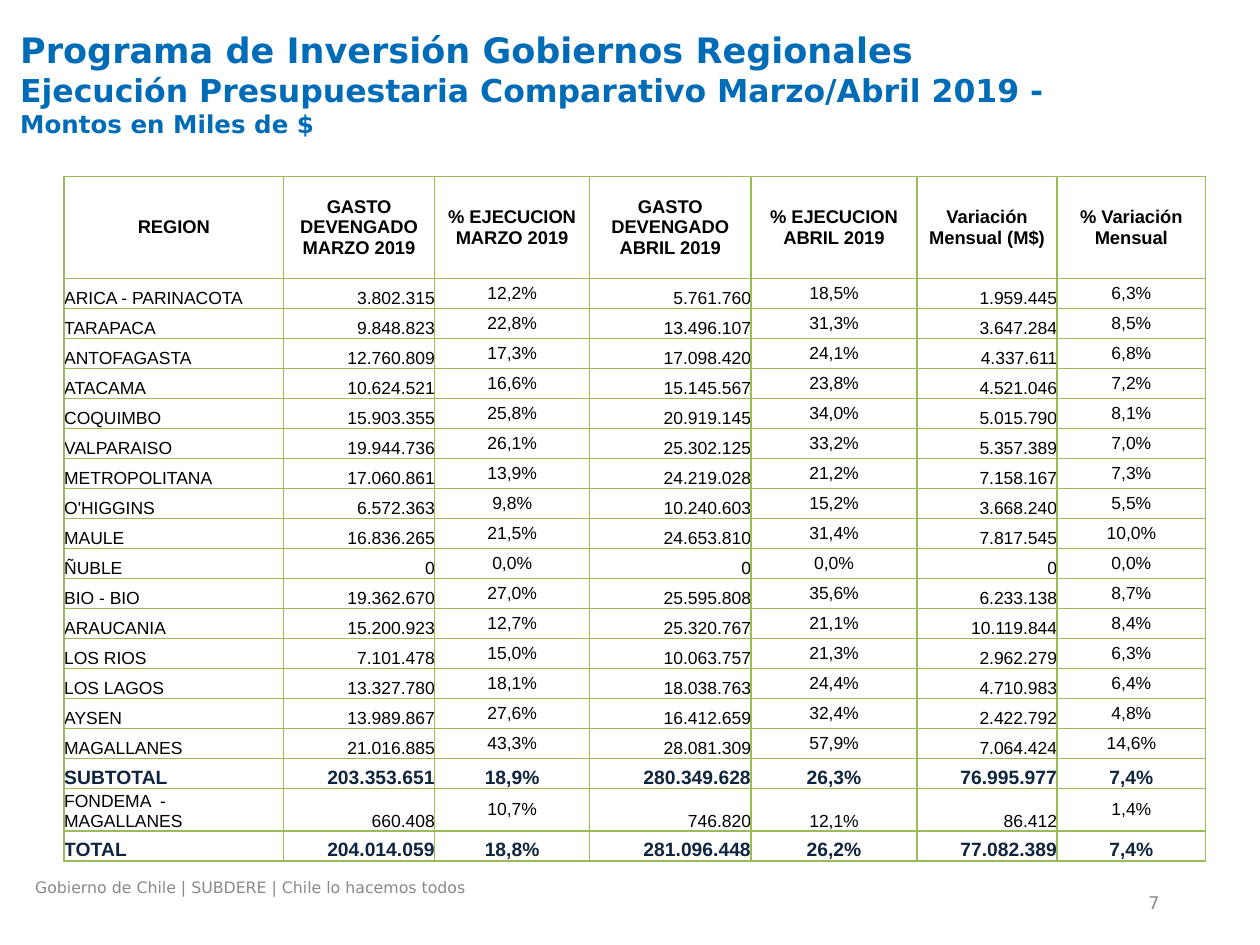
from dataclasses import dataclass
from typing import Any

from lxml.etree import SubElement
from pptx import Presentation
from pptx.dml.color import RGBColor
from pptx.enum.text import MSO_ANCHOR as Anchor, MSO_AUTO_SIZE as AutoSize, PP_ALIGN as Align
from pptx.oxml.ns import qn
from pptx.util import Inches, Pt

HEADINGS = ["REGION", "GASTO DEVENGADO MARZO 2019", "% EJECUCION MARZO 2019",
            "GASTO DEVENGADO ABRIL 2019", "% EJECUCION ABRIL 2019",
            "Variación Mensual (M$)", "% Variación Mensual"]
REGIONS = [
    ("ARICA - PARINACOTA", "3.802.315", "12,2%", "5.761.760", "18,5%", "1.959.445", "6,3%"),
    ("TARAPACA", "9.848.823", "22,8%", "13.496.107", "31,3%", "3.647.284", "8,5%"),
    ("ANTOFAGASTA", "12.760.809", "17,3%", "17.098.420", "24,1%", "4.337.611", "6,8%"),
    ("ATACAMA", "10.624.521", "16,6%", "15.145.567", "23,8%", "4.521.046", "7,2%"),
    ("COQUIMBO", "15.903.355", "25,8%", "20.919.145", "34,0%", "5.015.790", "8,1%"),
    ("VALPARAISO", "19.944.736", "26,1%", "25.302.125", "33,2%", "5.357.389", "7,0%"),
    ("METROPOLITANA", "17.060.861", "13,9%", "24.219.028", "21,2%", "7.158.167", "7,3%"),
    ("O'HIGGINS", "6.572.363", "9,8%", "10.240.603", "15,2%", "3.668.240", "5,5%"),
    ("MAULE", "16.836.265", "21,5%", "24.653.810", "31,4%", "7.817.545", "10,0%"),
    ("ÑUBLE", "0", "0,0%", "0", "0,0%", "0", "0,0%"),
    ("BIO - BIO", "19.362.670", "27,0%", "25.595.808", "35,6%", "6.233.138", "8,7%"),
    ("ARAUCANIA", "15.200.923", "12,7%", "25.320.767", "21,1%", "10.119.844", "8,4%"),
    ("LOS RIOS", "7.101.478", "15,0%", "10.063.757", "21,3%", "2.962.279", "6,3%"),
    ("LOS LAGOS", "13.327.780", "18,1%", "18.038.763", "24,4%", "4.710.983", "6,4%"),
    ("AYSEN", "13.989.867", "27,6%", "16.412.659", "32,4%", "2.422.792", "4,8%"),
    ("MAGALLANES", "21.016.885", "43,3%", "28.081.309", "57,9%", "7.064.424", "14,6%"),
    ("SUBTOTAL", "203.353.651", "18,9%", "280.349.628", "26,3%", "76.995.977", "7,4%"),
    ("FONDEMA  - MAGALLANES", "660.408", "10,7%", "746.820", "12,1%", "86.412", "1,4%"),
    ("TOTAL", "204.014.059", "18,8%", "281.096.448", "26,2%", "77.082.389", "7,4%"),
]
COLUMN_WIDTHS = [17.4, 12, 12.3, 12.8, 13.2, 11.1, 11.8]  # percent of slide width
ALIGNMENTS = [Align.LEFT] + [Align.RIGHT, Align.CENTER] * 3


def colour(code):
    return RGBColor.from_string(code)


@dataclass
class Report:
    """Style and current slide; lengths are percentages of the slide's size."""
    deck: Any
    page: Any
    text_font: str = "DejaVu Sans"
    table_font: str = "Arial"
    blue: str = "006CB7"
    gray: str = "898989"
    green: str = "9BBB59"
    navy: str = "0F243E"
    black: str = "000000"

    def across(self, share):
        return round(self.deck.slide_width * share / 100)

    def down(self, share):
        return round(self.deck.slide_height * share / 100)

    def area(self, left, top, width, height):
        return self.across(left), self.down(top), self.across(width), self.down(height)

    def style(self, font, name, size, shade, bold=False):
        font.name, font.size, font.bold = name, Pt(size), bold
        font.color.rgb = colour(shade)

    def title(self, area, first, *others):
        box = self.page.shapes.title
        box.left, box.top, box.width, box.height = self.area(*area)
        frame = box.text_frame
        frame.auto_size, frame.word_wrap = AutoSize.NONE, True
        frame.vertical_anchor, frame.margin_top = Anchor.TOP, Inches(0.08)
        frame.text = first[0]
        para = frame.paragraphs[0]
        para.alignment = Align.LEFT
        para.add_line_break()
        for text, _ in others:
            para.add_run().text = text
        for span, (_, size) in zip(para.runs, (first, *others)):
            self.style(span.font, self.text_font, size, self.blue, True)

    def note(self, area, text, size, align=Align.LEFT, anchor=Anchor.TOP):
        frame = self.page.shapes.add_textbox(*self.area(*area)).text_frame
        frame.word_wrap, frame.vertical_anchor = True, anchor
        frame.text = text
        para = frame.paragraphs[0]
        para.alignment = align
        self.style(para.runs[0].font, self.text_font, size, self.gray)

    def cell(self, cell, text, align, anchor, size, shade, bold):
        cell.margin_left = cell.margin_right = cell.margin_top = cell.margin_bottom = 0
        cell.vertical_anchor = anchor
        # Green border on all four sides
        properties = cell._tc.get_or_add_tcPr()
        for side in ("a:lnL", "a:lnR", "a:lnT", "a:lnB"):
            line = SubElement(properties, qn(side), w=str(Pt(1)))
            fill = SubElement(line, qn("a:solidFill"))
            SubElement(fill, qn("a:srgbClr"), val=self.green)
        cell.fill.background()
        cell.text = text
        para = cell.text_frame.paragraphs[0]
        para.alignment = align
        self.style(para.runs[0].font, self.table_font, size, shade, bold)

    def table(self, area, header_height, headings, rows):
        table = self.page.shapes.add_table(len(rows) + 1, len(headings), *self.area(*area)).table
        table.first_row = table.horz_banding = False
        for column, width in zip(table.columns, COLUMN_WIDTHS):
            column.width = self.across(width)
        row_height = (area[3] - header_height) / len(rows)
        for index, row in enumerate(table.rows):
            row.height = self.down(row_height if index else header_height)
        # Header
        for cell, text in zip(table.rows[0].cells, headings):
            self.cell(cell, text, Align.CENTER, Anchor.MIDDLE, 10.5, self.black, True)
        # Regions and totals
        for index, values in enumerate(rows, 1):
            is_total = values[0].endswith("TOTAL")
            look = (11, self.navy, True) if is_total else (10, self.black, False)
            for number, (text, align) in enumerate(zip(values, ALIGNMENTS)):
                centred = align == Align.CENTER and not is_total
                if values[0].startswith("FONDEMA") and number == 4:
                    centred = False
                anchor = Anchor.MIDDLE if centred else Anchor.BOTTOM
                self.cell(table.cell(index, number), text, align, anchor, *look)


def main():
    deck = Presentation()
    deck.slide_width, deck.slide_height = Inches(10), Inches(7.5)
    report = Report(deck, deck.slides.add_slide(deck.slide_layouts[5]))

    # Heading
    report.title((0.6, 2, 89.7, 16.67),
                 ("Programa de Inversión Gobiernos Regionales", 20),
                 ("Ejecución Presupuestaria Comparativo Marzo/Abril 2019 - ", 18),
                 ("Montos en Miles de $", 14))

    # Footer and page number
    report.note((1.8, 92.27, 64.8, 3.6),
                "Gobierno de Chile | SUBDERE | Chile lo hacemos todos", 9)
    report.note((69.7, 94.13, 23.3, 2.8), "7", 10, Align.RIGHT, Anchor.MIDDLE)

    # Budget comparison
    report.table((5.1, 18.67, 90.6, 71.2), 10.8, HEADINGS, REGIONS)
    deck.save("out.pptx")


if __name__ == "__main__":
    main()
